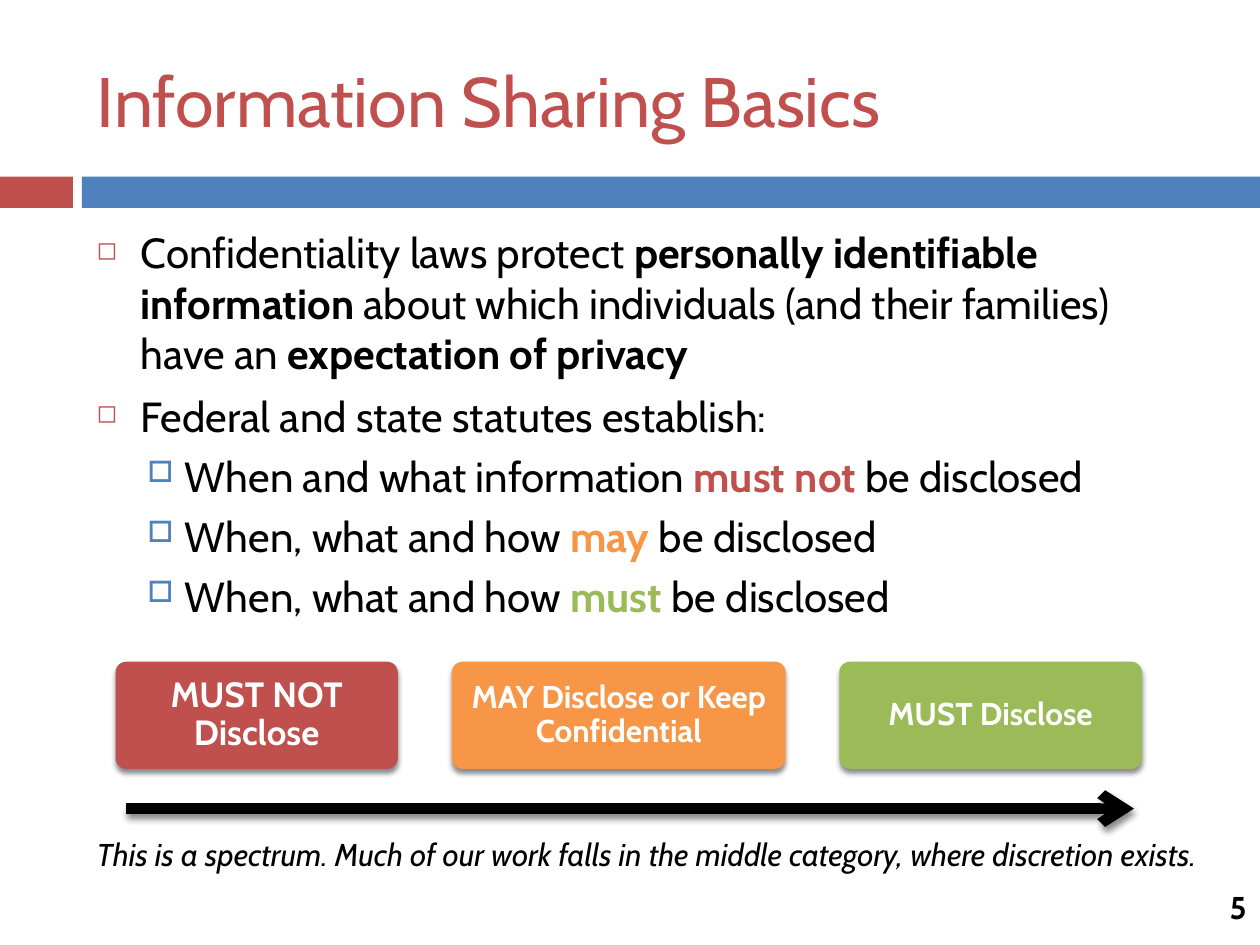
from lxml import etree
from pptx import Presentation
from pptx.dml.color import RGBColor
from pptx.enum.shapes import MSO_CONNECTOR, MSO_SHAPE
from pptx.enum.text import MSO_ANCHOR, MSO_AUTO_SIZE, PP_ALIGN
from pptx.oxml.ns import qn
from pptx.util import Cm, Pt

RECT, ROUND = MSO_SHAPE.RECTANGLE, MSO_SHAPE.ROUNDED_RECTANGLE
LINE = MSO_CONNECTOR.STRAIGHT
MIDDLE = MSO_ANCHOR.MIDDLE
LEFT, CENTER = PP_ALIGN.LEFT, PP_ALIGN.CENTER
FIXED = MSO_AUTO_SIZE.NONE

RED, BLUE, ORANGE, GREEN = "C0504D", "4F81BD", "F79646", "9BBB59"
BLACK, WHITE = "000000", "FFFFFF"

# Bullet levels: mark, colour, size %, left margin and hang in cm, space before
LEVELS = [("◻", RED, 60, 0.89, 0.89, 7), ("□", BLUE, 70, 1.78, 0.76, 5.5)]


def color(code):
    return RGBColor.from_string(code)


def add(parent, tag, **attrs):
    node = etree.SubElement(parent, qn(tag))
    for key, value in attrs.items():
        node.set(key, str(value))
    return node


class Deck:
    font = "Cabin"

    def __init__(self):
        self.prs = Presentation()
        self.prs.slide_width, self.prs.slide_height = Cm(25.4), Cm(19.05)
        self.slide = self.prs.slides.add_slide(self.prs.slide_layouts[5])
        self.shapes = self.slide.shapes

    def style(self, para, size, code, bold=False, italic=False):
        for run in para.runs:
            font = run.font
            font.name, font.size = self.font, Pt(size)
            font.bold, font.italic = bold, italic
            font.color.rgb = color(code)

    def shade(self, shape):
        props = shape.element.spPr
        node = props.find(qn("a:effectLst"))
        if node is None:
            node = add(props, "a:effectLst")
        drop = add(node, "a:outerShdw", blurRad=Pt(3), dist=Pt(2.4),
                   dir=90 * 60000, rotWithShape=0)
        add(add(drop, "a:srgbClr", val=BLACK), "a:alpha", val=45000)

    def title(self, text, x, y, w, h):
        box = self.shapes.title
        box.left, box.top, box.width, box.height = Cm(x), Cm(y), Cm(w), Cm(h)
        frame = box.text_frame
        frame.text = text
        frame.auto_size, frame.vertical_anchor = FIXED, MIDDLE
        frame.paragraphs[0].alignment = LEFT
        self.style(frame.paragraphs[0], 40, RED)

    def block(self, kind, fill, x, y, w, h):
        shape = self.shapes.add_shape(kind, Cm(x), Cm(y), Cm(w), Cm(h))
        shape.fill.solid()
        shape.fill.fore_color.rgb = color(fill)
        shape.line.fill.background()
        shape.shadow.inherit = False
        return shape

    def card(self, text, size, fill, x, y, w, h):
        shape = self.block(ROUND, fill, x, y, w, h)
        shape.adjustments[0] = 0.1
        self.shade(shape)
        frame = shape.text_frame
        frame.text = text
        frame.word_wrap, frame.vertical_anchor = True, MIDDLE
        frame.margin_left = frame.margin_right = Cm(0.25)
        frame.margin_top = frame.margin_bottom = Cm(0.25)
        para = frame.paragraphs[0]
        para.alignment, para.line_spacing = CENTER, 0.9
        self.style(para, size, WHITE, bold=True)

    def arrow(self, x1, x2, y):
        line = self.shapes.add_connector(LINE, Cm(x1), Cm(y), Cm(x2), Cm(y))
        line.line.width = Pt(6)
        line.line.color.rgb = color(BLACK)
        add(line.line._get_or_add_ln(), "a:tailEnd", type="arrow")
        self.shade(line)

    def text(self, text, x, y, w, h, wrap=True, **look):
        box = self.shapes.add_textbox(Cm(x), Cm(y), Cm(w), Cm(h))
        frame = box.text_frame
        frame.text, frame.word_wrap = text, wrap
        self.style(frame.paragraphs[0], 18, BLACK, **look)

    def bullets(self, items, x, y, w, h):
        frame = self.shapes.add_textbox(Cm(x), Cm(y), Cm(w), Cm(h)).text_frame
        frame.word_wrap = True
        for i, (level, parts) in enumerate(items):
            para = frame.add_paragraph() if i else frame.paragraphs[0]
            mark, code, size, left, hang, before = LEVELS[level]
            para.level, para.space_before = level, Pt(before)
            props = para._p.get_or_add_pPr()
            props.set("marL", str(Cm(left)))
            props.set("indent", str(-Cm(hang)))
            add(add(props, "a:buClr"), "a:srgbClr", val=code)
            add(props, "a:buSzPct", val=size * 1000)
            add(props, "a:buChar", char=mark)
            for words, _ in parts:
                para.add_run().text = words
            self.style(para, 24, BLACK)
            for run, (_, accent) in zip(para.runs, parts):
                if accent:
                    run.font.bold = True
                    run.font.color.rgb = color(accent)


def main():
    deck = Deck()

    # Header
    deck.block(RECT, RED, 0, 3.56, 1.47, 0.63)
    deck.block(RECT, BLUE, 1.65, 3.56, 23.75, 0.63)
    deck.title("Information Sharing Basics", 1.7, 0.64, 22.66, 2.74)

    # Bullets: each part is wording and accent colour
    rules = [("When and what information ", "must not ", RED),
             ("When, what and how ", "may ", ORANGE),
             ("When, what and how ", "must ", GREEN)]
    items = [
        (0, [("Confidentiality laws protect ", None),
             ("personally identifiable information ", BLACK),
             ("about which individuals (and their families) have an ", None),
             ("expectation of privacy", BLACK)]),
        (0, [("Federal and state statutes establish:", None)]),
    ]
    items += [(1, [(start, None), (key, code), ("be disclosed", None)])
              for start, key, code in rules]
    deck.bullets(items, 1.7, 4.45, 22.66, 8.89)

    # Spectrum
    cards = [("MUST NOT Disclose", 20, RED, 2.33, 5.69),
             ("MAY Disclose or Keep Confidential", 18, ORANGE, 9.11, 6.73),
             ("MUST Disclose", 18, GREEN, 16.92, 6.1)]
    for words, size, fill, x, w in cards:
        deck.card(words, size, fill, x, 13.34, w, 2.16)
    deck.arrow(2.54, 22.86, 16.3)
    deck.text("This is a spectrum. Much of our work falls in the middle "
              "category, where discretion exists.",
              1.7, 16.71, 24.77, 1.02, italic=True)

    # Page number
    deck.text("5", 24.54, 17.78, 0.86, 1.02, wrap=False, bold=True)

    deck.prs.save("out.pptx")


if __name__ == "__main__":
    main()
